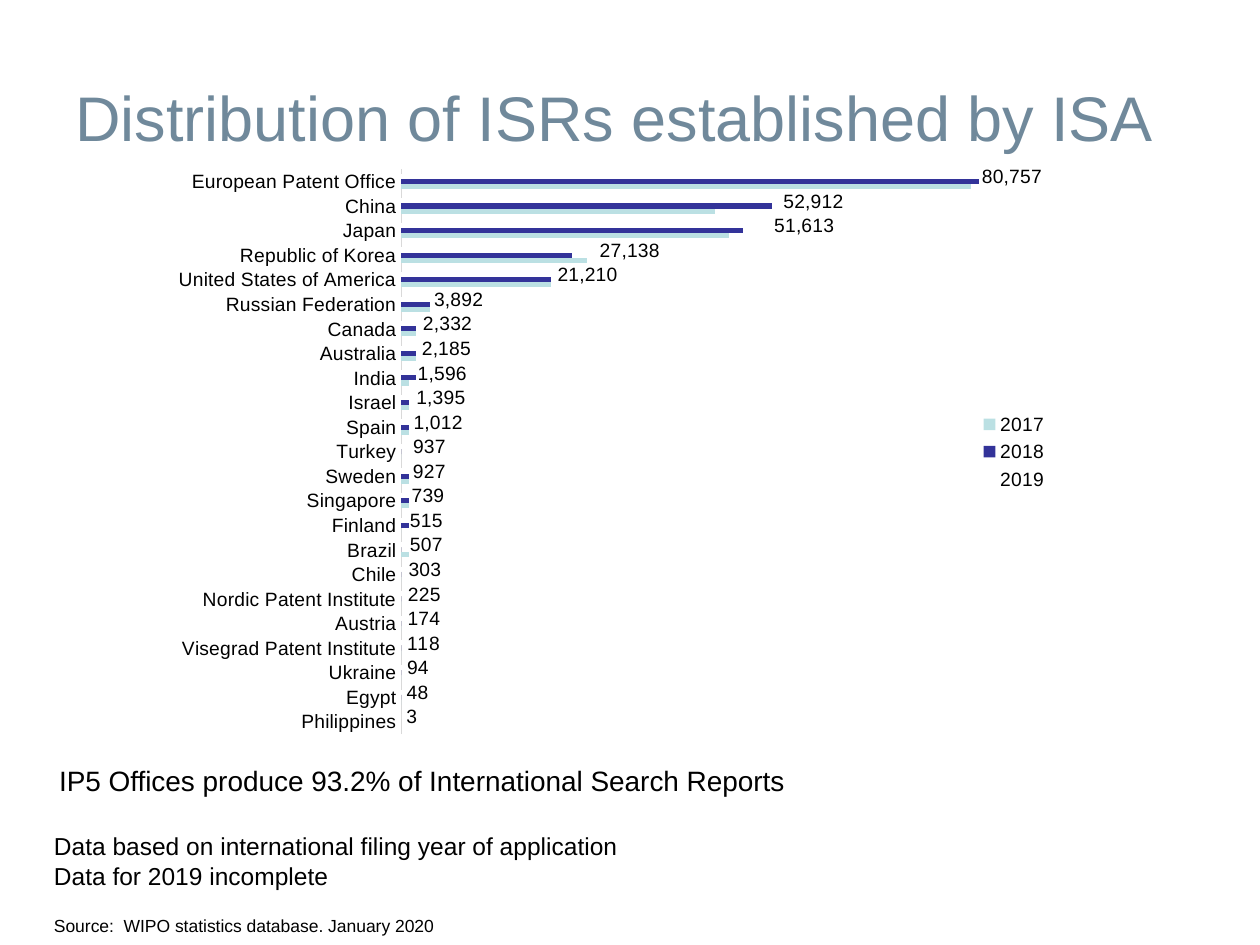
"""Build the slide on the distribution of ISRs by searching authority."""
from lxml.etree import SubElement
from pptx import Presentation
from pptx.chart.data import CategoryChartData
from pptx.dml.color import RGBColor
from pptx.enum.chart import XL_CHART_TYPE, XL_LABEL_POSITION, XL_LEGEND_POSITION, XL_TICK_LABEL_POSITION, XL_TICK_MARK
from pptx.enum.text import MSO_ANCHOR, MSO_AUTO_SIZE, PP_ALIGN
from pptx.oxml.ns import qn
from pptx.util import Inches, Pt

COLORS = {"title": "70899B", "text": "000000", "axis": "D9D9D9",
          "2019": "FFFFFF", "2018": "333399", "2017": "BBE0E3"}
FONT = "Arial"

OFFICES = [
    ("European Patent Office", 80757, 81000, 80000),
    ("China", 52912, 52000, 44000),
    ("Japan", 51613, 48000, 46000),
    ("Republic of Korea", 27138, 24000, 26000),
    ("United States of America", 21210, 21000, 21000),
    ("Russian Federation", 3892, 4000, 4000),
    ("Canada", 2332, 2000, 2000),
    ("Australia", 2185, 2000, 2000),
    ("India", 1596, 2000, 1000),
    ("Israel", 1395, 1000, 1000),
    ("Spain", 1012, 1000, 1000),
    ("Turkey", 937, 0, 0),
    ("Sweden", 927, 1000, 1000),
    ("Singapore", 739, 1000, 1000),
    ("Finland", 515, 1000, 0),
    ("Brazil", 507, 0, 1000),
    ("Chile", 303, 0, 0),
    ("Nordic Patent Institute", 225, 0, 0),
    ("Austria", 174, 0, 0),
    ("Visegrad Patent Institute", 118, 0, 0),
    ("Ukraine", 94, 0, 0),
    ("Egypt", 48, 0, 0),
    ("Philippines", 3, None, None),
]


def set_font(font, size, color="text"):
    font.name = FONT
    font.size = Pt(size)
    font.color.rgb = RGBColor.from_string(COLORS[color])


def add_text(slide, box, lines, size, align=PP_ALIGN.LEFT, wrap=False):
    frame = slide.shapes.add_textbox(*map(Inches, box)).text_frame
    frame.word_wrap = wrap
    frame.auto_size = MSO_AUTO_SIZE.SHAPE_TO_FIT_TEXT
    paragraph = frame.paragraphs[0]
    paragraph.alignment = align
    for index, line in enumerate(lines):
        if index:
            paragraph.add_line_break()
        run = paragraph.add_run()
        run.text = line
        set_font(run.font, size)


prs = Presentation()
prs.slide_width = Inches(10)
prs.slide_height = Inches(7.5)
slide = prs.slides.add_slide(prs.slide_layouts[6])

title = slide.shapes.add_textbox(Inches(0.5), Inches(0.3), Inches(9), Inches(1.25)).text_frame
title.word_wrap = True
title.vertical_anchor = MSO_ANCHOR.MIDDLE
title_run = title.paragraphs[0].add_run()
title_run.text = "Distribution of ISRs established by ISA"
set_font(title_run.font, 36, "title")

names, *yearly_values = zip(*OFFICES)
data = CategoryChartData(number_format="#,##0")
data.categories = names
for year, values in zip(("2019", "2018", "2017"), yearly_values):
    data.add_series(year, values)
chart = slide.shapes.add_chart(XL_CHART_TYPE.BAR_CLUSTERED, Inches(1.25), Inches(1.25),
                               Inches(7.17), Inches(4.67), data).chart
set_font(chart.font, 10)
chart.has_title = False

chart.has_legend = True
chart.legend.position = XL_LEGEND_POSITION.RIGHT
chart.legend.include_in_layout = True
set_font(chart.legend.font, 11)

offices_axis = chart.category_axis
offices_axis.reverse_order = True
offices_axis.has_major_gridlines = False
offices_axis.major_tick_mark = XL_TICK_MARK.NONE
offices_axis.minor_tick_mark = XL_TICK_MARK.NONE
offices_axis.tick_label_position = XL_TICK_LABEL_POSITION.NEXT_TO_AXIS
offices_axis.format.line.color.rgb = RGBColor.from_string(COLORS["axis"])
offices_axis.format.line.width = Pt(0.75)
set_font(offices_axis.tick_labels.font, 11)

reports_axis = chart.value_axis
reports_axis.visible = False
reports_axis.has_major_gridlines = False
reports_axis.minimum_scale = 0
reports_axis.maximum_scale = 90000

plot = chart.plots[0]
plot.gap_width = 182
plot.overlap = 0
plot.vary_by_categories = False
for series in plot.series:
    series.invert_if_negative = False
    series.format.fill.solid()
    series.format.fill.fore_color.rgb = RGBColor.from_string(COLORS[series.name])

labels = plot.series[0].data_labels
labels.show_value = True
labels.number_format = "#,##0"
labels.number_format_is_linked = False
labels.position = XL_LABEL_POSITION.OUTSIDE_END
set_font(labels.font, 11)

plot_area = chart.element.find(".//" + qn("c:plotArea"))
layout = plot_area.find(qn("c:layout"))
if layout is None:
    layout = SubElement(plot_area, qn("c:layout"))
    plot_area.insert(0, layout)
manual = SubElement(layout, qn("c:manualLayout"))
for tag, value in (("layoutTarget", "inner"), ("xMode", "edge"), ("yMode", "edge"),
                   ("x", "0.27"), ("y", "0.02"), ("w", "0.71"), ("h", "0.96")):
    SubElement(manual, qn("c:" + tag)).set("val", value)

add_text(slide, (0.33, 7.21, 5, 0.27), ["Source:  WIPO statistics database. January 2020"], 10, wrap=True)
add_text(slide, (0.33, 6.55, 4.7, 0.57),
         ["Data based on international filing year of application", "Data for 2019 incomplete"], 14)
add_text(slide, (0.33, 6.01, 6.04, 0.37),
         ["IP5 Offices produce 93.2% of International Search Reports"], 16, PP_ALIGN.CENTER)

prs.save("out.pptx")
